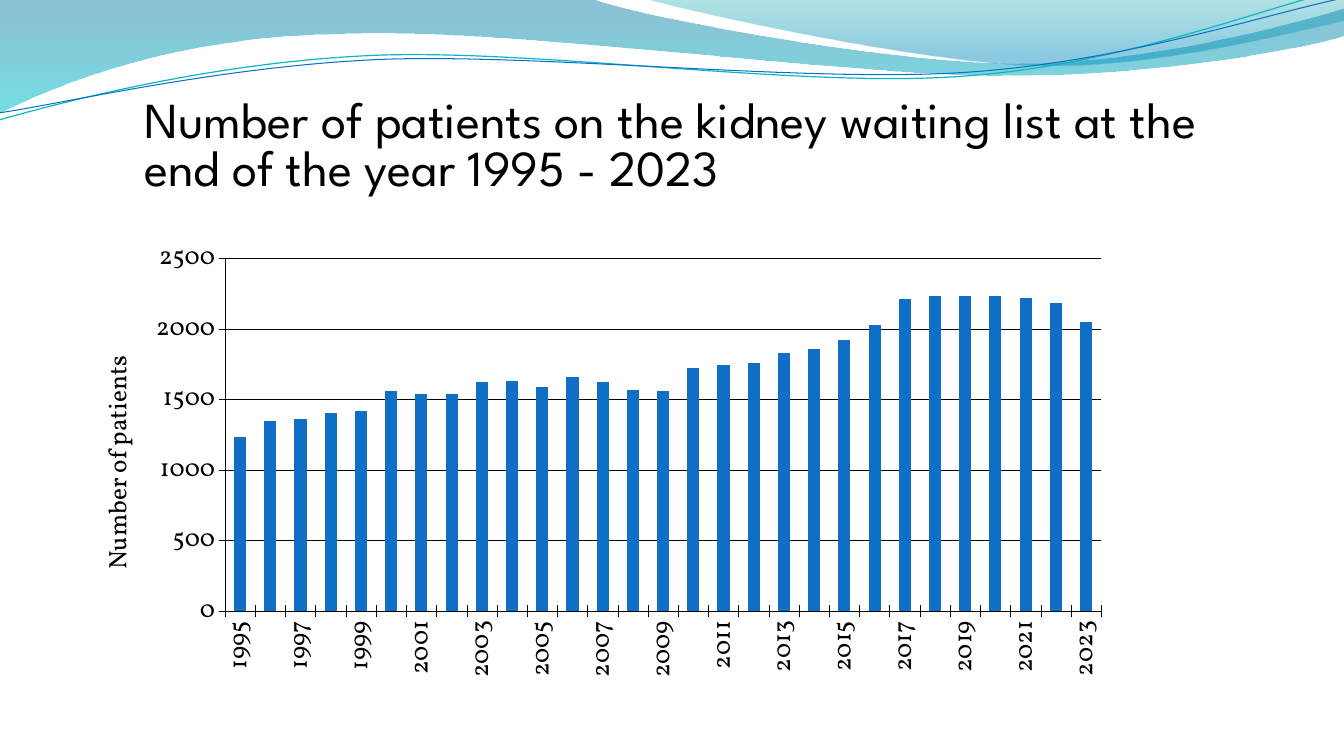
"""Build the slide on the kidney waiting list, 1995 to 2023."""
from dataclasses import dataclass

from lxml import etree
from pptx import Presentation
from pptx.chart.data import CategoryChartData
from pptx.dml.color import RGBColor
from pptx.enum.chart import XL_CHART_TYPE, XL_TICK_MARK
from pptx.enum.text import MSO_ANCHOR, MSO_AUTO_SIZE, PP_ALIGN
from pptx.oxml.ns import qn
from pptx.util import Inches, Pt

STACKED = XL_CHART_TYPE.COLUMN_STACKED
CROSS = XL_TICK_MARK.CROSS
TOP = MSO_ANCHOR.TOP
LEFT = PP_ALIGN.LEFT
NO_FIT = MSO_AUTO_SIZE.NONE

BLACK = RGBColor(0x00, 0x00, 0x00)
BLUE = RGBColor(0x0F, 0x6F, 0xC6)
TEAL = RGBColor(0x0A, 0xB8, 0xBF)
DEEP_BLUE = RGBColor(0x00, 0x74, 0xA1)
CYAN = RGBColor(0x00, 0xC6, 0xCF)
SEA_GREEN = RGBColor(0x00, 0xA1, 0xA9)
SKY_BLUE = RGBColor(0x00, 0x8B, 0xBF)

TITLE_FONT = "League Spartan"
CHART_FONT = "Vollkorn"
FIRST_YEAR = 1995
PATIENTS = (
    1230, 1350, 1360, 1400, 1420, 1560, 1540, 1540, 1620, 1630,
    1590, 1660, 1620, 1570, 1560, 1720, 1740, 1760, 1830, 1860,
    1920, 2030, 2210, 2230, 2230, 2230, 2220, 2180, 2050,
)

Point = tuple[float, float]


@dataclass(frozen=True)
class Stop:
    """One gradient stop: position and opacity as fractions."""
    position: float
    color: RGBColor
    opacity: float


@dataclass(frozen=True)
class Wave:
    """An outline whose segments hold one point (line) or three (Bézier)."""
    start: Point
    segments: tuple[tuple[Point, ...], ...]
    stops: tuple[Stop, ...] = ()
    color: RGBColor = BLUE
    width: float = 0


WAVES = (
    Wave((0, 0), (
        ((5.87, -0.01),),
        ((6.34, 0.17), (8.84, 0.63), (10.11, 0.63)),
        ((11.37, 0.63), (12.77, 0.26), (13.33, 0.09)),
        ((13.34, 0.36),),
        ((13.11, 0.44), (11.59, 0.76), (9.94, 0.75)),
        ((8.29, 0.75), (5.09, 0.28), (3.43, 0.34)),
        ((1.72, 0.36), (0.61, 0.83), (-0.02, 1.13)),
        ((0, 0),),
    ), stops=(Stop(0, DEEP_BLUE, 0.45), Stop(1, CYAN, 0.55))),
    Wave((6.38, -0.01), (
        ((6.79, 0.11), (9.09, 0.62), (10.25, 0.65)),
        ((11.4, 0.69), (12.82, 0.32), (13.33, 0.21)),
        ((13.33, 0),),
        ((6.38, -0.01),),
    ), stops=(Stop(0, SEA_GREEN, 0.3), Stop(0.8, SKY_BLUE, 0.45))),
    Wave((-0.01, 1.19), (
        ((0.63, 1.01), (2.1, 0.62), (3.69, 0.55)),
        ((5.27, 0.48), (7.89, 0.87), (9.49, 0.76)),
        ((11.1, 0.66), (12.51, 0.08), (13.3, -0.1)),
    ), color=TEAL, width=0.85),
    Wave((-0.01, 1.12), (
        ((0.62, 1.03), (2.18, 0.66), (3.77, 0.59)),
        ((5.37, 0.53), (7.96, 0.82), (9.55, 0.72)),
        ((11.14, 0.62), (12.55, 0.14), (13.33, -0.02)),
    ), color=BLUE, width=0.75),
)


def bend(sp, wave: Wave) -> None:
    """Turn each run of three outline points into one cubic curve."""
    steps = iter(list(sp._element.spPr.iter(qn("a:lnTo"))))
    for segment in wave.segments:
        group = [next(steps) for _ in segment]
        if len(group) == 3:
            curve = etree.Element(qn("a:cubicBezTo"))
            group[0].addprevious(curve)
            for step in group:
                curve.append(step[0])
                step.getparent().remove(step)


def add_wave(s, wave: Wave) -> None:
    """Draw one wave of the header."""
    points = [wave.start] + [point for segment in wave.segments for point in segment]
    corners = [(Inches(x), Inches(y)) for x, y in points]
    builder = s.shapes.build_freeform(*corners[0], scale=1.0)
    builder.add_line_segments(corners[1:], close=bool(wave.stops))
    sp = builder.convert_to_shape()
    bend(sp, wave)
    sp.shadow.inherit = False
    if not wave.stops:
        sp.fill.background()
        sp.line.color.rgb = wave.color
        sp.line.width = Pt(wave.width)
        return
    sp.line.fill.background()
    sp.fill.gradient()
    sp.fill.gradient_angle = 270
    for target, stop in zip(sp.fill.gradient_stops, wave.stops):
        target.position = stop.position
        target.color.rgb = stop.color
    for color, stop in zip(sp._element.spPr.iter(qn("a:srgbClr")), wave.stops):
        etree.SubElement(color, qn("a:alpha"), val=str(round(stop.opacity * 100000)))


def add_title(s) -> None:
    """Format the title placeholder and bring it to the front."""
    title = s.shapes.title
    title.left, title.top = Inches(1.33), Inches(0.94)
    title.width, title.height = Inches(11.14), Inches(1.25)
    s.shapes._spTree.append(title._element)
    tf = title.text_frame
    tf.word_wrap = True
    tf.auto_size = NO_FIT
    tf.vertical_anchor = TOP
    p = tf.paragraphs[0]
    p.alignment = LEFT
    p.line_spacing = 0.8
    r = p.add_run()
    r.text = "Number of patients on the kidney waiting list at the end of the year 1995 - 2023"
    set_font(r.font, TITLE_FONT, 36)


def set_font(font, name: str, size: float) -> None:
    """Apply a plain black font."""
    font.name, font.size, font.bold = name, Pt(size), False
    font.color.rgb = BLACK


def set_layout(parent, index: int, **values: str) -> None:
    """Place a chart part by fractions of the chart area."""
    layout = parent.find(qn("c:layout"))
    if layout is None:
        layout = etree.Element(qn("c:layout"))
        parent.insert(index, layout)
    manual = etree.SubElement(layout, qn("c:manualLayout"))
    for tag, value in values.items():
        etree.SubElement(manual, qn(f"c:{tag}"), val=value)


def style_line(line) -> None:
    """Make an axis or grid line a black hairline."""
    line.color.rgb = BLACK
    line.width = Pt(0.29)


def add_patients_chart(s) -> None:
    """Add the column chart of patients per year."""
    data = CategoryChartData()
    data.categories = [str(FIRST_YEAR + i) for i in range(len(PATIENTS))]
    data.add_series("Series 1", PATIENTS)
    chart = s.shapes.add_chart(STACKED, Inches(0.48), Inches(2.1),
                               Inches(11.45), Inches(5.14), data).chart
    chart.has_title = False
    chart.has_legend = False
    set_font(chart.font, CHART_FONT, 18)
    plot = chart.plots[0]
    plot.gap_width, plot.overlap, plot.vary_by_categories = 150, 100, False
    fill = plot.series[0].format.fill
    fill.solid()
    fill.fore_color.rgb = BLUE

    years, counts = chart.category_axis, chart.value_axis
    for axis in (years, counts):
        axis.major_tick_mark = CROSS
        style_line(axis.format.line)
        set_font(axis.tick_labels.font, CHART_FONT, 18)
    years._element.txPr.find(qn("a:bodyPr")).set("rot", "-5400000")
    skip = etree.Element(qn("c:tickLblSkip"), val="2")
    years._element.find(qn("c:noMultiLvlLbl")).addprevious(skip)
    counts.minimum_scale, counts.maximum_scale, counts.major_unit = 0, 2500, 500
    counts.has_major_gridlines = True
    style_line(counts.major_gridlines.format.line)

    tf = counts.axis_title.text_frame
    tf._txBody.find(qn("a:bodyPr")).set("rot", "-5400000")
    r = tf.paragraphs[0].add_run()
    r.text = "Number of patients"
    set_font(r.font, CHART_FONT, 18)
    set_layout(counts.axis_title._element, 1, xMode="edge", yMode="edge", x="0.04", y="0.27")
    set_layout(chart._chartSpace.chart.plotArea, 0, layoutTarget="inner", xMode="edge",
               yMode="edge", x="0.153", y="0.09", w="0.759", h="0.681")


def main() -> None:
    """Build and save the presentation."""
    prs = Presentation()
    prs.slide_width, prs.slide_height = Inches(13.33), Inches(7.5)
    s = prs.slides.add_slide(prs.slide_layouts[5])
    for wave in WAVES:
        add_wave(s, wave)
    add_title(s)
    add_patients_chart(s)
    prs.save("out.pptx")


if __name__ == "__main__":
    main()
